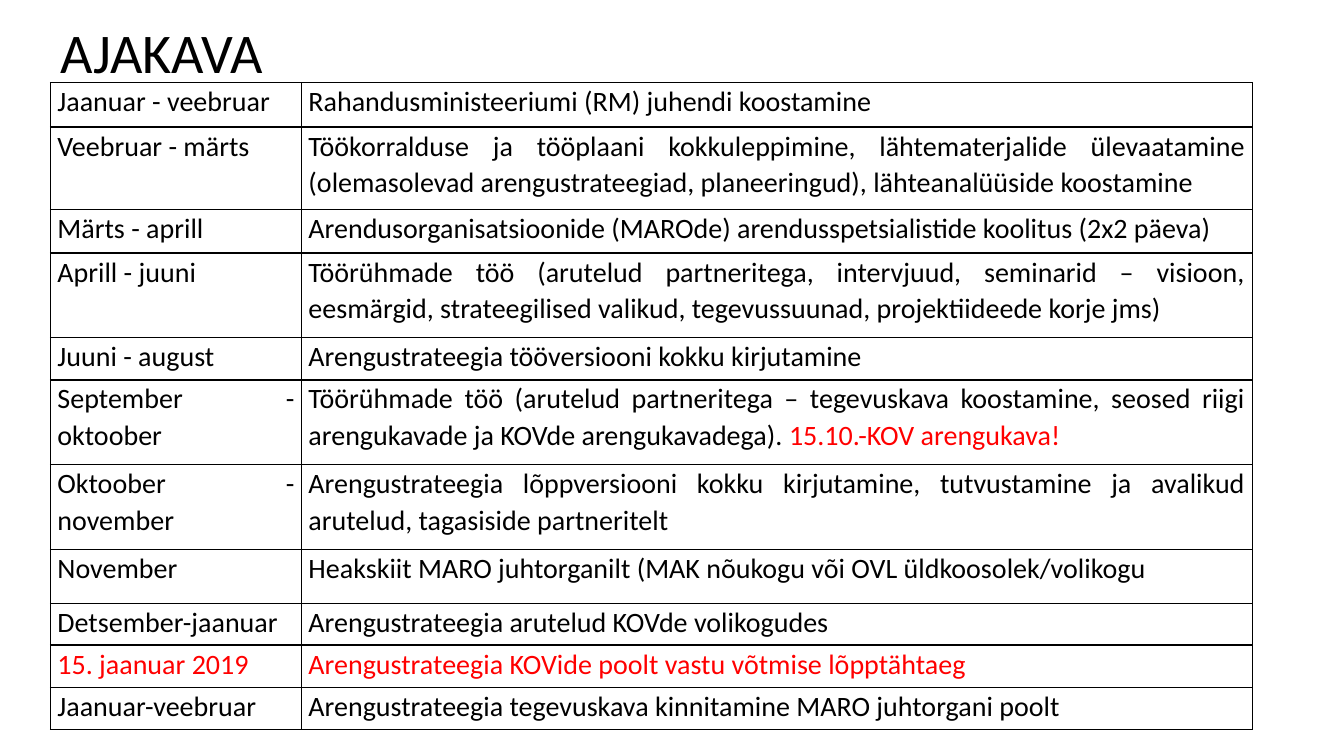
from lxml import etree
from pptx import Presentation
from pptx import util as u
from pptx.dml.color import RGBColor
from pptx.enum import text
from pptx.oxml.ns import qn

FONT = "Calibri"
BLACK = "000000"
RED = "FF0000"
COLUMN_WIDTHS = [2.49, 9.43]

# Row height, period, then the activity as (words, colour) runs
SCHEDULE = [
    (0.44, [("Jaanuar - veebruar", BLACK)],
     [("Rahandusministeeriumi (RM) juhendi koostamine", BLACK)]),
    (0.82, [("Veebruar - märts", BLACK)],
     [("Töökorralduse ja tööplaani kokkuleppimine, lähtematerjalide ülevaatamine "
       "(olemasolevad arengustrateegiad, planeeringud), lähteanalüüside koostamine", BLACK)]),
    (0.43, [("Märts - aprill", BLACK)],
     [("Arendusorganisatsioonide (MAROde) arendusspetsialistide koolitus (2x2 päeva)", BLACK)]),
    (0.84, [("Aprill - juuni", BLACK)],
     [("Töörühmade töö (arutelud partneritega, intervjuud, seminarid – visioon, "
       "eesmärgid, strateegilised valikud, tegevussuunad, projektiideede korje jms)", BLACK)]),
    (0.42, [("Juuni - august", BLACK)],
     [("Arengustrateegia tööversiooni kokku kirjutamine", BLACK)]),
    (0.84, [("September - oktoober", BLACK)],
     [("Töörühmade töö (arutelud partneritega – tegevuskava koostamine, seosed riigi "
       "arengukavade ja KOVde arengukavadega). ", BLACK),
      ("15.10.-KOV arengukava!", RED)]),
    (0.84, [("Oktoober - november", BLACK)],
     [("Arengustrateegia lõppversiooni kokku kirjutamine, tutvustamine ja avalikud "
       "arutelud, tagasiside partneritelt", BLACK)]),
    (0.54, [("November", BLACK)],
     [("Heakskiit MARO juhtorganilt (MAK nõukogu või OVL üldkoosolek/volikogu", BLACK)]),
    (0.41, [("Detsember-jaanuar", BLACK)],
     [("Arengustrateegia arutelud KOVde volikogudes", BLACK)]),
    (0.42, [("15. jaanuar 2019", RED)],
     [("Arengustrateegia KOVide poolt vastu võtmise lõpptähtaeg", RED)]),
    (0.42, [("Jaanuar-veebruar", BLACK)],
     [("Arengustrateegia tegevuskava kinnitamine MARO juhtorgani poolt", BLACK)]),
]


def color(hex_string):
    return RGBColor.from_string(hex_string)


def add_run(paragraph, words, size, hex_string):
    run = paragraph.add_run()
    run.text = words
    run.font.name = FONT
    run.font.size = u.Pt(size)
    run.font.color.rgb = color(hex_string)


def set_borders(cell, hex_string, points):
    properties = cell._tc.get_or_add_tcPr()
    # Border lines come before the fill in the cell properties
    for index, side in enumerate(("lnL", "lnR", "lnT", "lnB")):
        line = etree.Element(qn(f"a:{side}"), w=str(u.Pt(points)))
        fill = etree.SubElement(line, qn("a:solidFill"))
        etree.SubElement(fill, qn("a:srgbClr"), val=hex_string)
        properties.insert(index, line)


def fill_cell(cell, runs):
    cell.fill.background()
    cell.margin_left = cell.margin_right = u.Inches(0.07)
    cell.margin_top = cell.margin_bottom = 0
    set_borders(cell, BLACK, 1)
    paragraph = cell.text_frame.paragraphs[0]
    paragraph.alignment = text.PP_ALIGN.JUSTIFY
    paragraph.line_spacing = 1.07
    for words, hex_string in runs:
        add_run(paragraph, words, 20, hex_string)


def place_title(slide, left, top, width, height):
    title = slide.shapes.title
    title.left, title.top = u.Inches(left), u.Inches(top)
    title.width, title.height = u.Inches(width), u.Inches(height)
    frame = title.text_frame
    frame.word_wrap = True
    frame.auto_size = text.MSO_AUTO_SIZE.NONE
    frame.vertical_anchor = text.MSO_ANCHOR.MIDDLE
    paragraph = frame.paragraphs[0]
    paragraph.alignment = text.PP_ALIGN.LEFT
    paragraph.line_spacing = 0.9
    add_run(paragraph, "AJAKAVA", 40, BLACK)


def place_schedule(slide, left, top, width, height):
    table = slide.shapes.add_table(
        len(SCHEDULE), len(COLUMN_WIDTHS),
        u.Inches(left), u.Inches(top), u.Inches(width), u.Inches(height)).table
    table.first_row = table.horz_banding = False
    for column, column_width in zip(table.columns, COLUMN_WIDTHS):
        column.width = u.Inches(column_width)
    for row, (row_height, *contents) in zip(table.rows, SCHEDULE):
        row.height = u.Inches(row_height)
        for cell, runs in zip(row.cells, contents):
            fill_cell(cell, runs)


def main():
    presentation = Presentation()
    presentation.slide_width = u.Inches(13.33)
    presentation.slide_height = u.Inches(7.5)
    slide = presentation.slides.add_slide(presentation.slide_layouts[5])
    # Heading
    place_title(slide, 0.5, 0.16, 11.92, 0.78)
    # Timetable
    place_schedule(slide, 0.5, 0.82, 11.92, 6.42)
    presentation.save("out.pptx")


if __name__ == "__main__":
    main()
